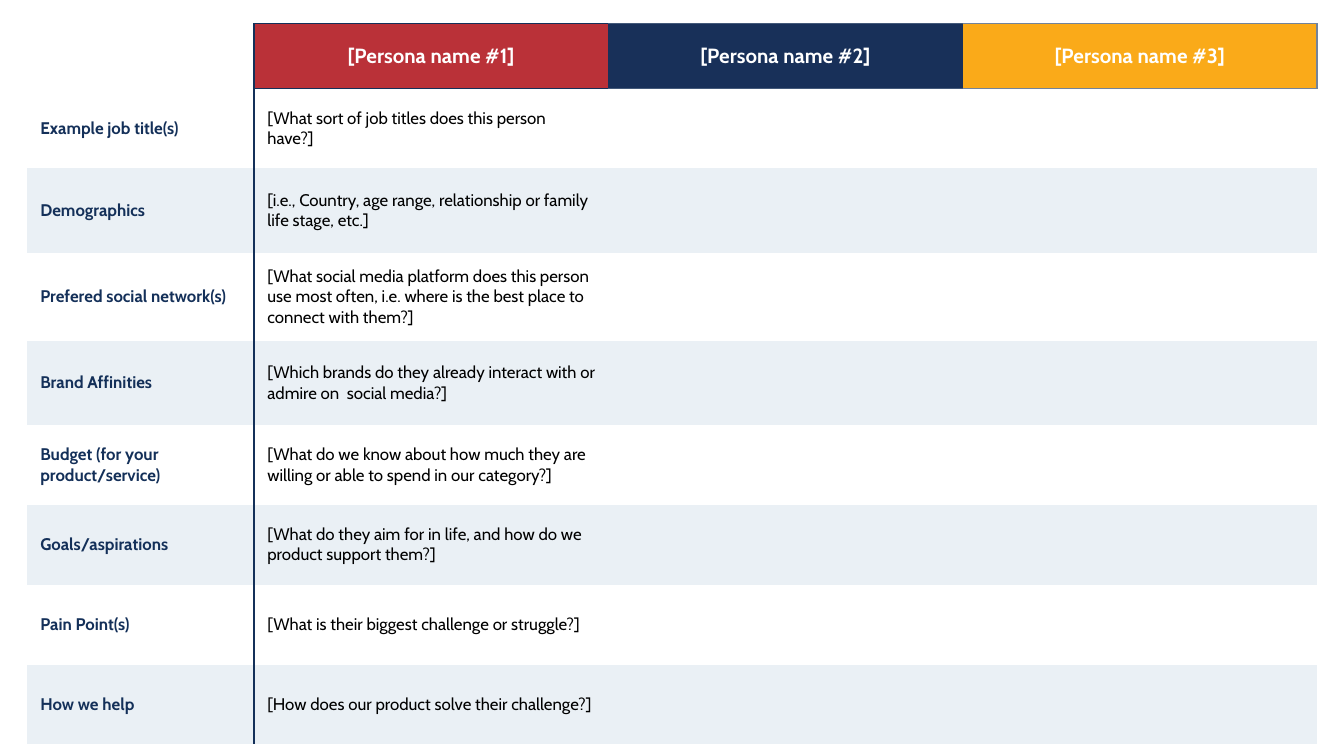
from lxml import etree
from pptx import Presentation, util as u
from pptx.dml.color import RGBColor
from pptx.enum import text
from pptx.oxml import ns

COLOURS = {
    "navy": "143059", "red": "BA3138", "blue": "183059", "amber": "FAAA19",
    "slate": "43597A", "grey": "72839B", "white": "FFFFFF", "band": "EAF0F5",
    "black": "000000",
}
NO_STYLE = "{2D5ABB26-0587-4C30-8999-92F81FD0307C}"
TABLE_SHARE, LABEL_SHARE = 0.96, 0.17 - 0.001
ROW_POINTS = [34.75, 42.75, 45.25, 42.75, 45.25] + [42.75] * 4
PERSONAS = [
    ("[Persona name #1]", "red", "navy"),
    ("[Persona name #2]", "blue", "slate"),
    ("[Persona name #3]", "amber", "grey"),
]
TRAITS = [
    ("Example job title(s)", "[What sort of job titles does this person have?]"),
    ("Demographics", "[i.e., Country, age range, relationship or family life stage, etc.]"),
    ("Prefered social network(s)",
     "[What social media platform does this person use most often, "
     "i.e. where is the best place to connect with them?]"),
    ("Brand Affinities",
     "[Which brands do they already interact with or admire on  social media?]"),
    ("Budget (for your product/service)",
     "[What do we know about how much they are willing or able to spend in our category?]"),
    ("Goals/aspirations",
     "[What do they aim for in life, and how do we product support them?]"),
    ("Pain Point(s)", "[What is their biggest challenge or struggle?]"),
    ("How we help", "[How does our product solve their challenge?]"),
]


def write(cell, words, size=9, colour="black", bold=False, align=text.PP_ALIGN.LEFT):
    cell.vertical_anchor = text.MSO_ANCHOR.MIDDLE
    cell.margin_left = cell.margin_right = u.Inches(0.1)
    cell.margin_top = cell.margin_bottom = u.Inches(0.1)
    paragraph = cell.text_frame.paragraphs[0]
    paragraph.alignment = align
    run = paragraph.add_run()
    run.text = words
    run.font.name = "Cabin"
    run.font.size = u.Pt(size)
    run.font.bold = bold
    run.font.color.rgb = RGBColor.from_string(COLOURS[colour])


class PersonaSlide:
    """Holds the style and the current slide, and draws its elements."""

    def __init__(self, presentation):
        self.width, self.height = presentation.slide_width, presentation.slide_height
        self.slide = presentation.slides.add_slide(presentation.slide_layouts[6])

    def table(self, left, top):
        persona_share = (TABLE_SHARE - LABEL_SHARE) / len(PERSONAS)
        shares = [LABEL_SHARE] + [persona_share] * len(PERSONAS)
        widths = [int(self.width * share) for share in shares]
        heights = [u.Pt(points) for points in ROW_POINTS]
        shape = self.slide.shapes.add_table(
            len(heights), len(widths), int(self.width * left), int(self.height * top),
            sum(widths), sum(heights))
        table = shape.table
        table.first_row = table.horz_banding = False
        shape.element.find(".//" + ns.qn("a:tableStyleId")).text = NO_STYLE
        for column, width in zip(table.columns, widths):
            column.width = width
        for row, height in zip(table.rows, heights):
            row.height = height
        return table

    def fill(self, cell, colour):
        cell.fill.solid()
        cell.fill.fore_color.rgb = RGBColor.from_string(COLOURS[colour])

    def borders(self, cell, **sides):
        properties = cell._tc.get_or_add_tcPr()
        for index, side in enumerate("LRTB"):
            line = etree.Element(ns.qn("a:ln" + side), w=str(u.Pt(0.75)))
            if side in sides:
                solid = etree.SubElement(line, ns.qn("a:solidFill"))
                etree.SubElement(solid, ns.qn("a:srgbClr"), val=COLOURS[sides[side]])
            else:
                etree.SubElement(line, ns.qn("a:noFill"))
            properties.insert(index, line)

    def header(self, table):
        self.borders(table.cell(0, 0), R="navy")
        for column, (name, colour, edge) in enumerate(PERSONAS, 1):
            cell = table.cell(0, column)
            write(cell, name, size=11, colour="white", bold=True,
                  align=text.PP_ALIGN.CENTER)
            self.fill(cell, colour)
            sides = {"T": edge, "B": edge}
            if column == 1:
                sides["L"] = edge
            if column == len(PERSONAS):
                sides["R"] = edge
            self.borders(cell, **sides)

    def traits(self, table):
        for row, (label, question) in enumerate(TRAITS, 1):
            write(table.cell(row, 0), label, colour="navy", bold=True)
            write(table.cell(row, 1), question)
            for column in range(len(PERSONAS) + 1):
                cell = table.cell(row, column)
                self.fill(cell, "white" if row % 2 else "band")
                sides = {0: {"R": "navy"}, 1: {"L": "navy"}}.get(column, {})
                if row == 1 and column:
                    sides["T"] = PERSONAS[column - 1][2]
                self.borders(cell, **sides)


def main():
    presentation = Presentation()
    presentation.slide_width = u.Inches(10)
    presentation.slide_height = presentation.slide_width * 9 // 16
    page = PersonaSlide(presentation)
    table = page.table(left=1 / 50, top=1 / 32)
    page.header(table)
    page.traits(table)
    presentation.save("out.pptx")


if __name__ == "__main__":
    main()
